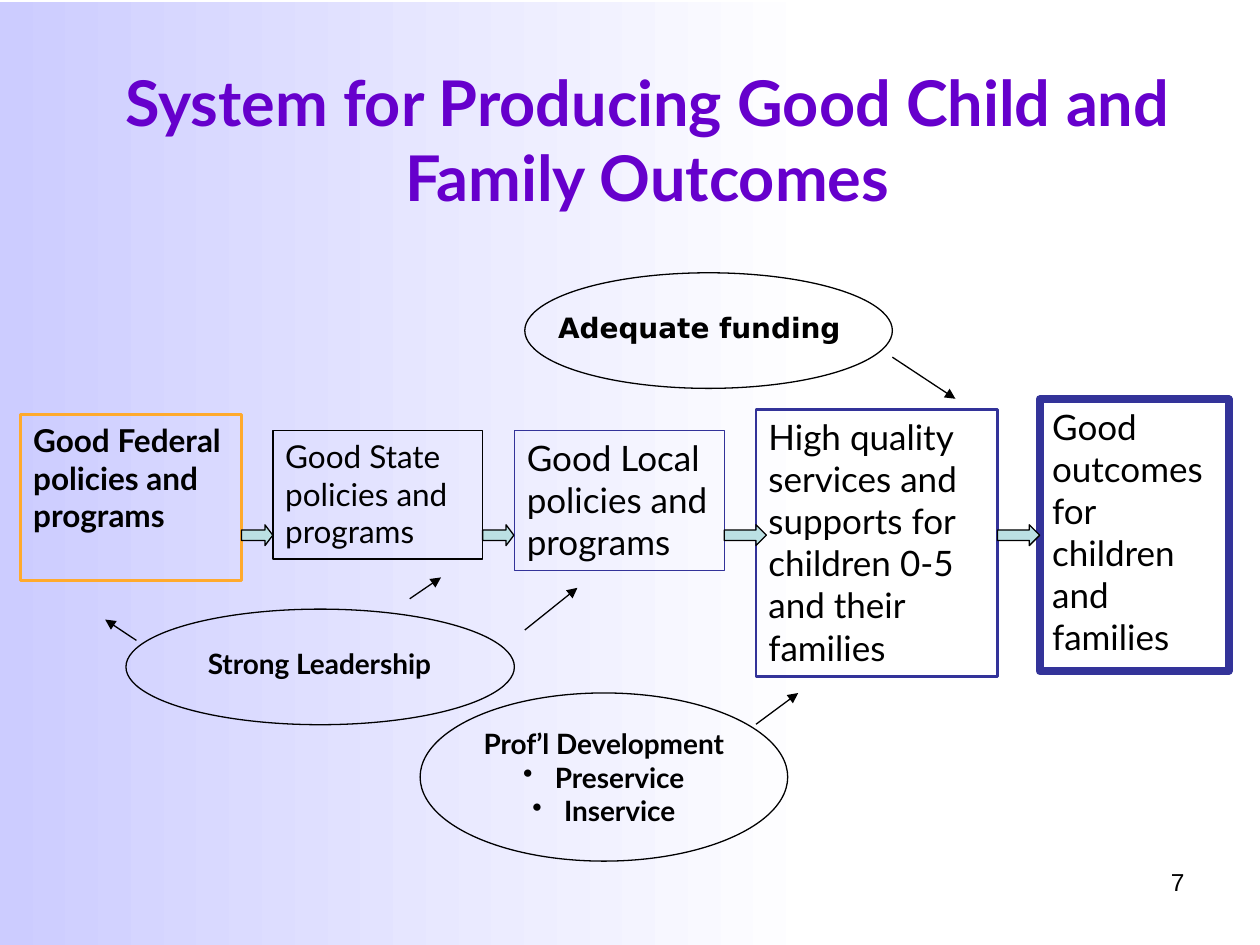
from lxml.etree import SubElement
from pptx import Presentation
from pptx.dml.color import RGBColor
from pptx.enum.shapes import MSO_CONNECTOR, MSO_SHAPE
from pptx.enum.text import MSO_ANCHOR, PP_ALIGN
from pptx.oxml.ns import qn
from pptx.util import Cm, Pt

BLACK = RGBColor(0x00, 0x00, 0x00)
WHITE = RGBColor(0xFF, 0xFF, 0xFF)
LAVENDER = RGBColor(0xCC, 0xCC, 0xFF)
PURPLE = RGBColor(0x66, 0x00, 0xCC)
ORANGE = RGBColor(0xFF, 0xAA, 0x2D)
NAVY = RGBColor(0x33, 0x33, 0x99)
PALE_TEAL = RGBColor(0xBB, 0xE0, 0xE3)

FLOW_TOP, FLOW_HEIGHT = 10.58, 0.42

STAGES = [
    ("Good Federal policies and programs", (0.42, 8.36, 4.45, 3.35), ORANGE, 1.5, 18, True),
    ("Good State policies and programs", (5.5, 8.68, 4.23, 2.59), BLACK, 1, 18, False),
    ("Good Local policies and programs", (10.37, 8.68, 4.23, 2.82), NAVY, 0.75, 20, False),
    ("High quality services and supports for children 0-5 and their families",
     (15.24, 8.26, 4.87, 5.38), NAVY, 1.5, 20, False),
    ("Good outcomes for children and families", (20.96, 8.05, 3.81, 5.48), NAVY, 4.5, 20, False),
]
FLOW_ARROWS = [(0.63, 0.375), (0.63, 0.375), (0.85, 0.5), (0.85, 0.5)]

INFLUENCES = [
    ((15.24, 14.6), (16.09, 13.97)),
    ((17.99, 7.2), (19.26, 8.04)),
    ((10.58, 12.7), (11.64, 11.85)),
    ((2.75, 12.91), (2.12, 12.49)),
    ((8.26, 12.07), (8.89, 11.64)),
]


def lengths(values):
    return [Cm(value) for value in values]


def write(holder, *lines, size=16, font="Lato", color=BLACK, bold=False,
          align=PP_ALIGN.LEFT, anchor=MSO_ANCHOR.TOP, wrap=True, indent=0, bulleted_from=None):
    frame = holder.text_frame
    frame.word_wrap = wrap
    frame.vertical_anchor = anchor
    frame.margin_left = Cm(0.25 + indent)
    for index, line in enumerate(lines):
        paragraph = frame.paragraphs[0] if index == 0 else frame.add_paragraph()
        paragraph.text = line
        paragraph.alignment = align
        if bulleted_from is not None and index >= bulleted_from:
            add_bullet(paragraph)
        paragraph.font.size = Pt(size)
        paragraph.font.name = font
        paragraph.font.bold = bold
        paragraph.font.color.rgb = color


def add_bullet(paragraph):
    properties = paragraph._p.get_or_add_pPr()
    properties.set("marL", str(Cm(0.64)))
    properties.set("indent", str(-Cm(0.64)))
    SubElement(properties, qn("a:buChar"), char="•")


def add_outline(slide, kind, area, fill=None, line=BLACK, weight=0.75):
    shape = slide.shapes.add_shape(kind, *lengths(area))
    shape.shadow.inherit = False
    if fill is None:
        shape.fill.background()
    else:
        shape.fill.solid()
        shape.fill.fore_color.rgb = fill
    if line is None:
        shape.line.fill.background()
    else:
        shape.line.color.rgb = line
        shape.line.width = Pt(weight)
    return shape


def add_label(slide, area, text, **style):
    write(slide.shapes.add_textbox(*lengths(area)), text, **style)


def add_backdrop(slide):
    fade = add_outline(slide, MSO_SHAPE.RECTANGLE, (0, 0.05, 16.51, 19), line=None)
    fade.fill.gradient()
    fade.fill.gradient_angle = 0
    for stop, color in zip(fade.fill.gradient_stops, (LAVENDER, WHITE)):
        stop.color.rgb = color
    add_outline(slide, MSO_SHAPE.RECTANGLE, (16.51, 0, 8.89, 11.43), fill=WHITE, line=None)


def add_flow(slide):
    for text, area, color, weight, size, bold in STAGES:
        stage = add_outline(slide, MSO_SHAPE.RECTANGLE, area, line=color, weight=weight)
        write(stage, text, size=size, bold=bold)
    for (_, (left, _, width, _), *_), (length, head) in zip(STAGES, FLOW_ARROWS):
        arrow = add_outline(slide, MSO_SHAPE.RIGHT_ARROW,
                            (left + width, FLOW_TOP, length, FLOW_HEIGHT), fill=PALE_TEAL)
        arrow.adjustments[1] = head


def add_influence(slide, start, end):
    connector = slide.shapes.add_connector(MSO_CONNECTOR.STRAIGHT, *lengths(start + end))
    connector.line.color.rgb = BLACK
    connector.line.width = Pt(0.75)
    SubElement(connector.line._get_or_add_ln(), qn("a:tailEnd"), type="triangle")
    SubElement(connector._element.spPr, qn("a:effectLst"))


def add_supports(slide):
    development = add_outline(slide, MSO_SHAPE.OVAL, (8.47, 13.97, 7.41, 3.39))
    write(development, "Prof’l Development", "Preservice", "Inservice", bold=True,
          align=PP_ALIGN.CENTER, anchor=MSO_ANCHOR.MIDDLE, wrap=False, bulleted_from=1)
    add_label(slide, (11, 6.14, 6.3, 0.94), "Adequate funding", font="DejaVu Sans", bold=True)
    add_outline(slide, MSO_SHAPE.OVAL, (10.58, 5.5, 7.41, 2.33))
    add_label(slide, (3.38, 12.91, 7.62, 0.94), "Strong Leadership", bold=True, indent=0.56)
    add_outline(slide, MSO_SHAPE.OVAL, (2.54, 12.28, 7.83, 2.33))
    for start, end in INFLUENCES:
        add_influence(slide, start, end)


def main():
    deck = Presentation()
    deck.slide_width, deck.slide_height = Cm(25.4), Cm(19.05)
    slide = deck.slides.add_slide(deck.slide_layouts[6])
    add_backdrop(slide)
    add_label(slide, (18.2, 17.36, 5.93, 1.32), "7", size=14, font="Arial", align=PP_ALIGN.RIGHT)
    add_label(slide, (1.9, 1.27, 22.3, 3.18), "System for Producing Good Child and Family Outcomes",
              size=36, color=PURPLE, bold=True, align=PP_ALIGN.CENTER, anchor=MSO_ANCHOR.BOTTOM)
    add_flow(slide)
    add_supports(slide)
    deck.save("out.pptx")


if __name__ == "__main__":
    main()
